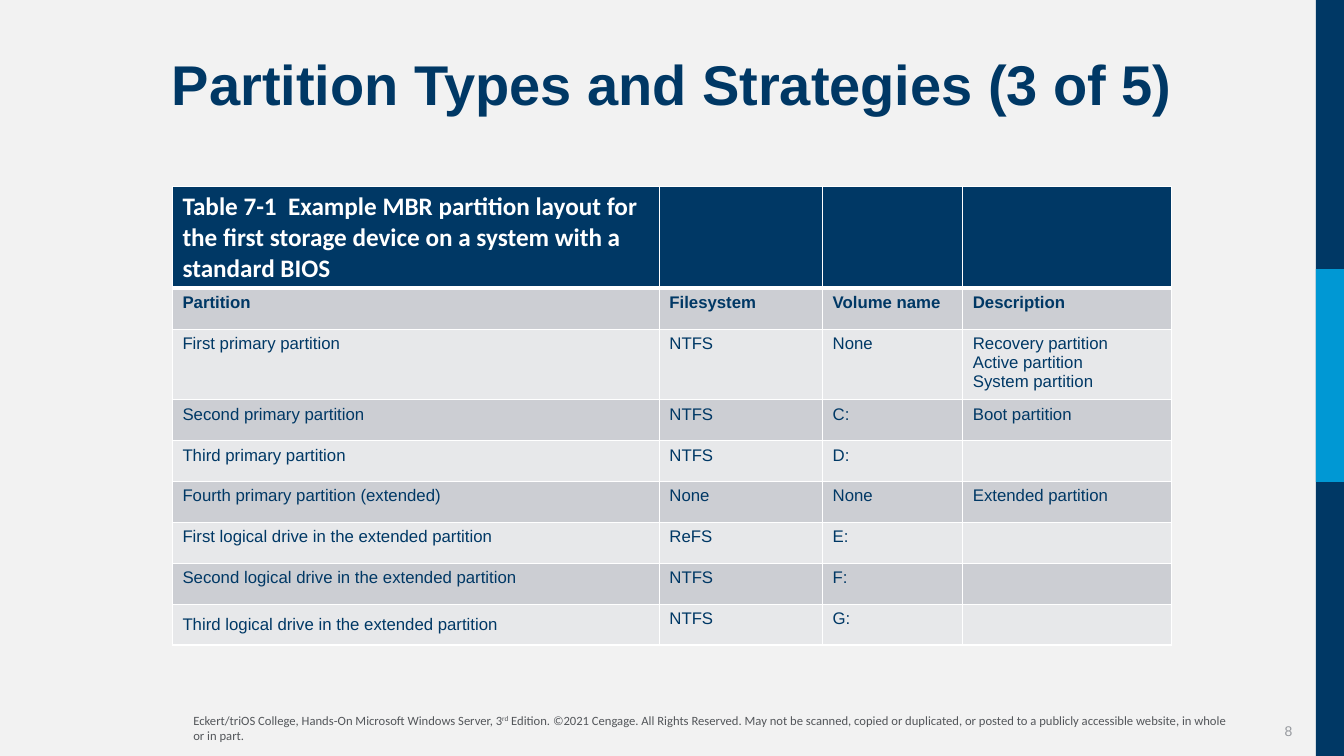
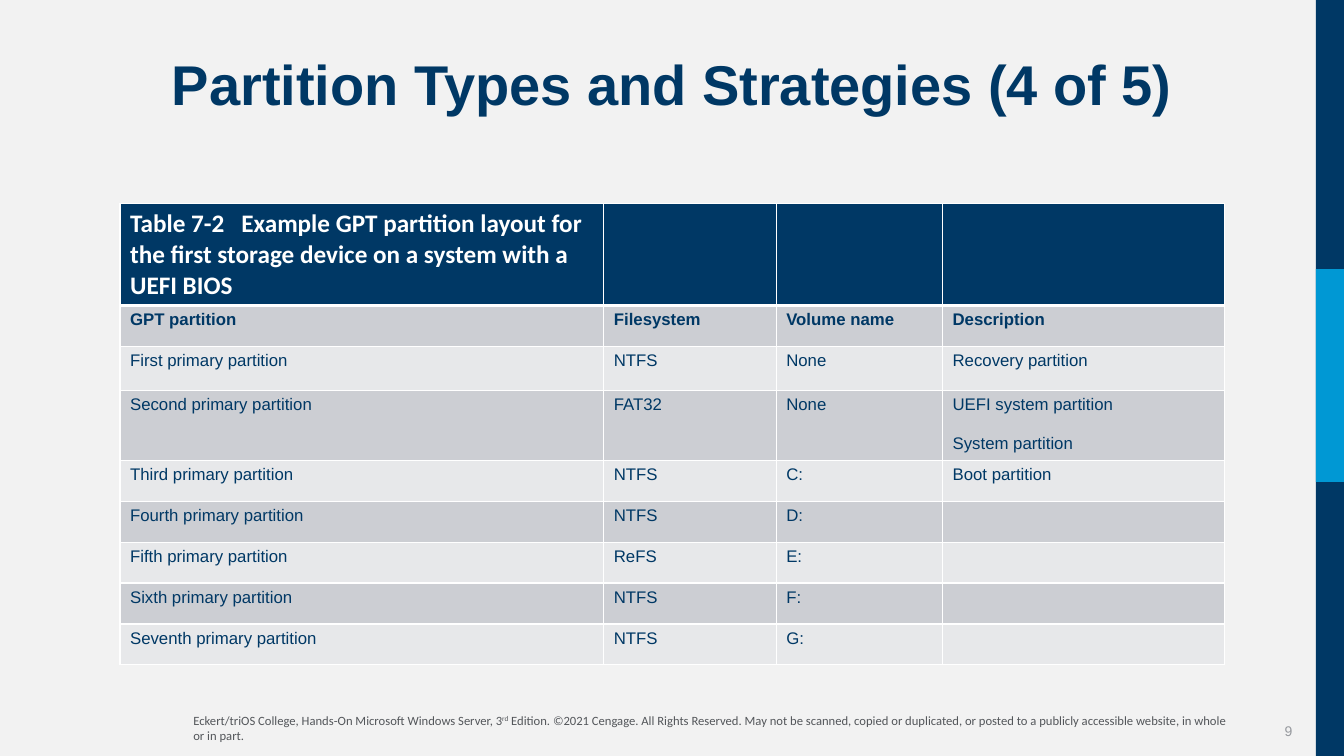
from dataclasses import dataclass

from lxml.etree import SubElement
from pptx import Presentation
from pptx.dml.color import RGBColor
from pptx.enum.shapes import MSO_SHAPE
from pptx.enum.text import MSO_ANCHOR, MSO_AUTO_SIZE, PP_ALIGN
from pptx.oxml import parse_xml
from pptx.oxml.ns import nsdecls
from pptx.presentation import Presentation as Deck
from pptx.shapes.autoshape import Shape
from pptx.slide import Slide
from pptx.table import _Cell as Cell
from pptx.text.text import _Run as Run
from pptx.util import Emu, Inches, Pt

SLIDE_W, SLIDE_H = Inches(13.333), Inches(7.5)


def across(share: float) -> Emu:
    return Emu(round(SLIDE_W * share / 100))


def down(share: float) -> Emu:
    return Emu(round(SLIDE_H * share / 100))


@dataclass(frozen=True)
class Theme:
    paper: str = "F2F2F2"
    navy: str = "003865"
    sky: str = "0098D4"
    white: str = "FFFFFF"
    band_dark: str = "CCCED3"
    band_light: str = "E7E8EA"
    footer_grey: str = "53565A"
    number_grey: str = "96999E"
    sans: str = "Arial"
    humanist: str = "Calibri"
    title_size: float = 40
    caption_size: float = 18
    cell_size: float = 12
    number_size: float = 10
    footer_size: float = 9
    line_width: float = 1
    header_line_width: float = 3


@dataclass(frozen=True)
class Area:
    left: float
    top: float
    width: float
    height: float

    def emu(self) -> tuple[Emu, Emu, Emu, Emu]:
        return across(self.left), down(self.top), across(self.width), down(self.height)


@dataclass(frozen=True)
class Band:
    area: Area
    color: str


@dataclass(frozen=True)
class PartitionSlide:
    title: str
    number: int
    left: float
    top: float
    columns: tuple[float, ...]
    tall_rows: dict[int, float]
    caption: str
    rows: tuple[tuple[str, ...], ...]
    line_gap: float = 0
    middle_cells: tuple[tuple[int, int], ...] = ()


THEME = Theme()
TITLE_AREA = Area(3.9, 6.93, 92.18, 17.73)
NUMBER_AREA = Area(90.9, 94, 6, 5.33)
FOOTER_AREA = Area(13.65, 93.6, 78.83, 5.33)
BANDS = (
    Band(Area(97.92, 0, 2.08, 100), THEME.navy),
    Band(Area(97.92, 35.6, 2.08, 28.13), THEME.sky),
)
CAPTION_HEIGHT = 13.47
ROW_HEIGHT = 5.41
FOOTER_RUNS = (
    ("Eckert/triOS College, Hands-On Microsoft Windows Server, 3", False),
    ("rd", True),
    (" Edition. ©2021 Cengage. All Rights Reserved. May not be scanned, copied or "
     "duplicated, or posted to a publicly accessible website, in whole or in part.", False),
)
COLUMN_NAMES = ("Filesystem", "Volume name", "Description")

SLIDES = (
    PartitionSlide(
        title="Partition Types and Strategies (3 of 5)",
        number=8,
        left=12.83,
        top=24.67,
        columns=(36.23, 12.15, 10.43, 15.53),
        tall_rows={2: 8.93},
        caption="Table 7-1  Example MBR partition layout for the first storage device "
                "on a system with a standard BIOS",
        rows=(
            ("Partition", *COLUMN_NAMES),
            ("First primary partition", "NTFS", "None",
             "Recovery partition\nActive partition\nSystem partition"),
            ("Second primary partition", "NTFS", "C:", "Boot partition"),
            ("Third primary partition", "NTFS", "D:", ""),
            ("Fourth primary partition (extended)", "None", "None", "Extended partition"),
            ("First logical drive in the extended partition", "ReFS", "E:", ""),
            ("Second logical drive in the extended partition", "NTFS", "F:", ""),
            ("Third logical drive in the extended partition", "NTFS", "G:", ""),
        ),
        middle_cells=((8, 0),),
    ),
    PartitionSlide(
        title="Partition Types and Strategies (4 of 5)",
        number=9,
        left=8.93,
        top=26.93,
        columns=(36, 12.83, 12.38, 21),
        tall_rows={2: 5.87, 3: 8.8},
        caption="Table 7-2   Example GPT partition layout for the first storage device "
                "on a system with a UEFI BIOS",
        rows=(
            ("GPT partition", *COLUMN_NAMES),
            ("First primary partition", "NTFS", "None", "Recovery partition"),
            ("Second primary partition", "FAT32", "None",
             "UEFI system partition\nSystem partition"),
            ("Third primary partition", "NTFS", "C:", "Boot partition"),
            ("Fourth primary partition", "NTFS", "D:", ""),
            ("Fifth primary partition", "ReFS", "E:", ""),
            ("Sixth primary partition", "NTFS", "F:", ""),
            ("Seventh primary partition", "NTFS", "G:", ""),
        ),
        line_gap=13.8,
    ),
)


def style(r: Run, font: str, size: float, color: str, bold: bool = False) -> None:
    r.font.name = font
    r.font.size = Pt(size)
    r.font.bold = bold
    r.font.color.rgb = RGBColor.from_string(color)


def place(s: Shape, area: Area) -> None:
    s.left, s.top, s.width, s.height = area.emu()


def add_title(slide: Slide, text: str) -> None:
    s = slide.shapes.title
    place(s, TITLE_AREA)
    tf = s.text_frame
    tf.text = text
    tf.auto_size = MSO_AUTO_SIZE.NONE
    tf.vertical_anchor = MSO_ANCHOR.TOP
    p = tf.paragraphs[0]
    p.alignment = PP_ALIGN.CENTER
    p.line_spacing = 0.9
    style(p.runs[0], THEME.sans, THEME.title_size, THEME.navy, True)


def add_bands(slide: Slide) -> None:
    for band in BANDS:
        s = slide.shapes.add_shape(MSO_SHAPE.RECTANGLE, *band.area.emu())
        s.shadow.inherit = False
        s.fill.solid()
        s.fill.fore_color.rgb = RGBColor.from_string(band.color)
        s.line.fill.background()


def add_footer(slide: Slide, number: int) -> None:
    tf = slide.shapes.add_textbox(*NUMBER_AREA.emu()).text_frame
    tf.word_wrap = True
    tf.vertical_anchor = MSO_ANCHOR.MIDDLE
    tf.text = str(number)
    p = tf.paragraphs[0]
    p.alignment = PP_ALIGN.RIGHT
    style(p.runs[0], THEME.sans, THEME.number_size, THEME.number_grey)

    tf = slide.shapes.add_textbox(*FOOTER_AREA.emu()).text_frame
    tf.word_wrap = True
    tf.auto_size = MSO_AUTO_SIZE.SHAPE_TO_FIT_TEXT
    for text, raised in FOOTER_RUNS:
        r = tf.paragraphs[0].add_run()
        r.text = text
        style(r, THEME.humanist, THEME.footer_size, THEME.footer_grey)
        if raised:
            r.font._element.set("baseline", "30000")


def set_borders(cell: Cell, top: float, bottom: float) -> None:
    sides = {"lnL": THEME.line_width, "lnR": THEME.line_width, "lnT": top, "lnB": bottom}
    properties = cell._tc.get_or_add_tcPr()
    for index, (side, width) in enumerate(sides.items()):
        line = parse_xml(f'<a:{side} {nsdecls("a")} w="{Pt(width)}"><a:solidFill/></a:{side}>')
        color = SubElement(line[0], line[0].tag.replace("solidFill", "srgbClr"))
        color.set("val", THEME.white)
        properties.insert(index, line)


def fill_cell(cell: Cell, text: str, row: int, line_gap: float) -> None:
    color = THEME.navy if row == 0 else (THEME.band_dark if row % 2 else THEME.band_light)
    cell.fill.solid()
    cell.fill.fore_color.rgb = RGBColor.from_string(color)
    set_borders(
        cell,
        THEME.header_line_width if row == 1 else THEME.line_width,
        THEME.header_line_width if row == 0 else THEME.line_width,
    )
    cell.text_frame.text = text
    for index, p in enumerate(cell.text_frame.paragraphs):
        if index and line_gap:
            p.space_before = Pt(line_gap)
        for r in p.runs:
            if row == 0:
                style(r, THEME.humanist, THEME.caption_size, THEME.white, True)
            else:
                style(r, THEME.sans, THEME.cell_size, THEME.navy, row == 1)


def add_partition_table(slide: Slide, content: PartitionSlide) -> None:
    rows = ((content.caption, "", "", ""), *content.rows)
    heights = [content.tall_rows.get(i, ROW_HEIGHT) for i in range(len(rows))]
    heights[0] = CAPTION_HEIGHT
    area = Area(content.left, content.top, sum(content.columns), sum(heights))
    table = slide.shapes.add_table(len(rows), len(content.columns), *area.emu()).table
    table.horz_banding = False
    for column, width in zip(table.columns, content.columns):
        column.width = across(width)
    for row, height in zip(table.rows, heights):
        row.height = down(height)
    for i, texts in enumerate(rows):
        for j, text in enumerate(texts):
            fill_cell(table.cell(i, j), text, i, content.line_gap)
    for i, j in content.middle_cells:
        table.cell(i, j).vertical_anchor = MSO_ANCHOR.MIDDLE


def add_partition_slide(prs: Deck, content: PartitionSlide) -> None:
    slide = prs.slides.add_slide(prs.slide_layouts.get_by_name("Title Only"))
    add_footer(slide, content.number)
    add_bands(slide)
    add_title(slide, content.title)
    add_partition_table(slide, content)


def main() -> None:
    prs = Presentation()
    prs.slide_width, prs.slide_height = SLIDE_W, SLIDE_H
    background = prs.slide_master.background.fill
    background.solid()
    background.fore_color.rgb = RGBColor.from_string(THEME.paper)
    for content in SLIDES:
        add_partition_slide(prs, content)
    prs.save("out.pptx")


if __name__ == "__main__":
    main()
